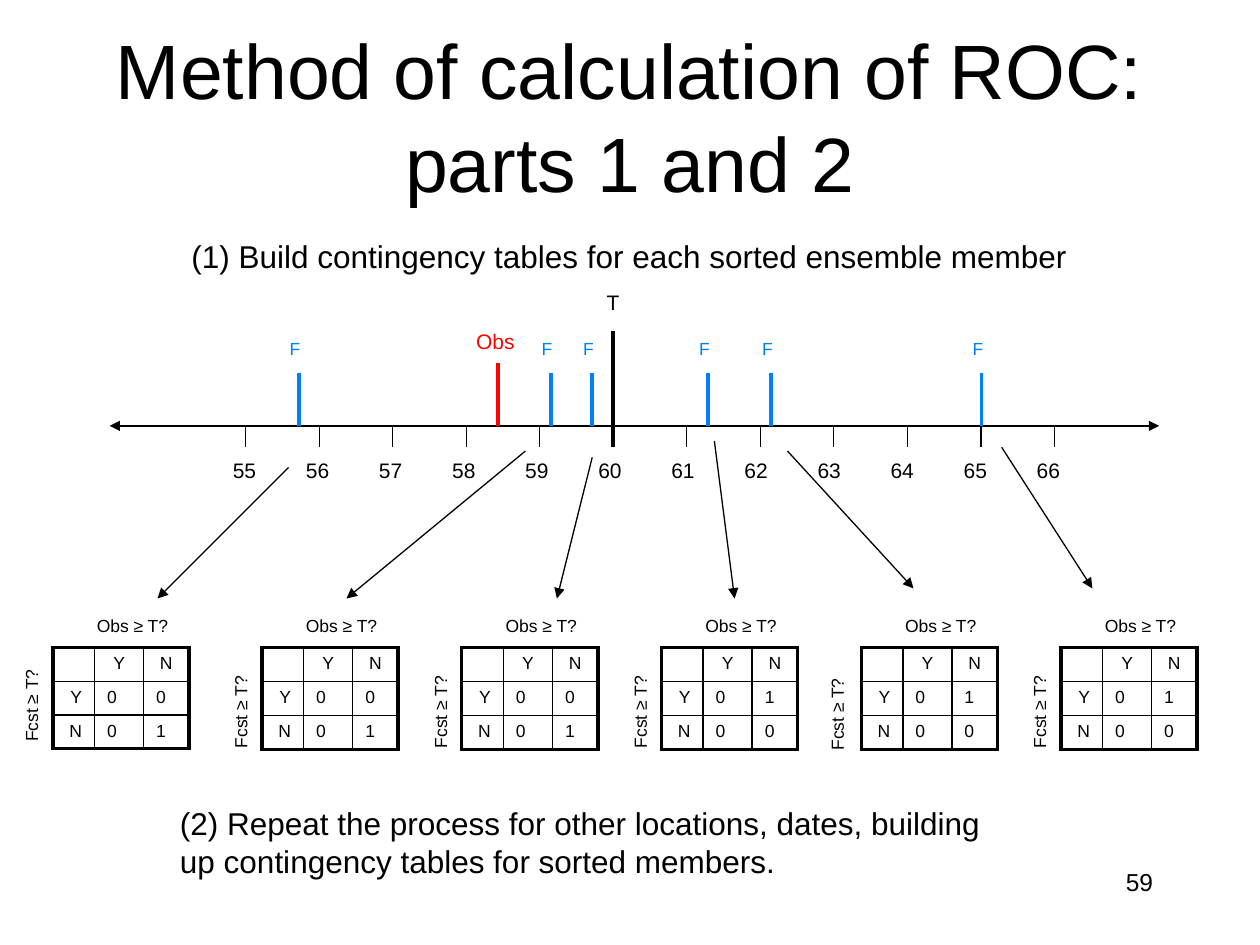
import pptx
import pptx.dml.color
import pptx.enum.shapes
import pptx.enum.text
import pptx.oxml
import pptx.oxml.ns
import pptx.util
from lxml import etree

Inches, Pt = pptx.util.Inches, pptx.util.Pt
ALIGN = pptx.enum.text.PP_ALIGN
BLACK, BLUE, RED = "000000", "0080FF", "FF0000"


def rgb(code):
    return pptx.dml.color.RGBColor.from_string(code)


def sub(parent, tag, **attrs):
    return etree.SubElement(parent, pptx.oxml.ns.qn(tag), **attrs)


class Deck:
    font = "Arial"
    thin, thick = 0.75, 2.25
    grid = 1

    def __init__(self, width, height):
        self.prs = pptx.Presentation()
        self.prs.slide_width, self.prs.slide_height = Inches(width), Inches(height)
        self.s = self.prs.slides.add_slide(self.prs.slide_layouts[6])

    def run(self, p, text, size, color=BLACK):
        r = p.add_run()
        r.text = text
        r.font.name, r.font.size = self.font, Pt(size)
        r.font.color.rgb = rgb(color)

    def text(self, x, y, w, h, lines, size, color=BLACK, align=ALIGN.LEFT,
             wrap=False, rotation=0):
        sp = self.s.shapes.add_textbox(Inches(x), Inches(y), Inches(w), Inches(h))
        sp.rotation = rotation
        tf = sp.text_frame
        tf.word_wrap = wrap
        if not wrap:
            tf.auto_size = pptx.enum.text.MSO_AUTO_SIZE.SHAPE_TO_FIT_TEXT
        for i, line in enumerate(lines):
            p = tf.add_paragraph() if i else tf.paragraphs[0]
            p.alignment = align
            self.run(p, line, size, color)
        return tf

    def title(self, x, y, w, h, first, second, size):
        tf = self.text(x, y, w, h, [first], size, align=ALIGN.CENTER, wrap=True)
        tf.vertical_anchor = pptx.enum.text.MSO_ANCHOR.MIDDLE
        p = tf.paragraphs[0]
        p.add_line_break()
        self.run(p, second, size)

    def tabbed(self, x, y, w, h, words, pitch, size):
        """One line of words set on evenly spaced tab stops."""
        tf = self.text(x, y, w, h, ["\t".join(words)], size, wrap=True)
        tabs = sub(tf.paragraphs[0]._p.get_or_add_pPr(), "a:tabLst")
        for i in range(1, len(words)):
            sub(tabs, "a:tab", pos=str(Inches(pitch * i)), algn="l")

    def line(self, x1, y1, x2, y2, width=thin, color=BLACK, ends=()):
        """Straight line; ends holds a:headEnd and a:tailEnd where arrows go."""
        c = self.s.shapes.add_connector(
            pptx.enum.shapes.MSO_CONNECTOR.STRAIGHT,
            Inches(x1), Inches(y1), Inches(x2), Inches(y2))
        c.line.width = Pt(width)
        c.line.color.rgb = rgb(color)
        for end in ends:
            sub(c.line._get_or_add_ln(), end, type="triangle")
        sub(c._element.spPr, "a:effectLst")

    def border(self, cell, row, col, last):
        tc_pr = cell._tc.get_or_add_tcPr()
        outer = {"L": col == 0, "R": col == last, "T": row == 0, "B": row == last}
        for side, is_outer in outer.items():
            width = self.thick if is_outer else self.grid
            ln = sub(tc_pr, "a:ln" + side, w=str(Pt(width)))
            sub(sub(ln, "a:solidFill"), "a:srgbClr", val=BLACK)

    def table(self, x, y, widths, row_height, rows, size):
        n = len(rows)
        frame = self.s.shapes.add_table(n, len(widths), Inches(x), Inches(y),
                                        Inches(sum(widths)), Inches(row_height * n))
        t = frame.table
        t.first_row = t.horz_banding = False
        for column, width in zip(t.columns, widths):
            column.width = Inches(width)
        for i, row in enumerate(rows):
            t.rows[i].height = Inches(row_height)
            for j, value in enumerate(row):
                cell = t.cell(i, j)
                self.border(cell, i, j, n - 1)
                cell.fill.background()
                p = cell.text_frame.paragraphs[0]
                p.space_before = Pt(size * 0.2)
                p.alignment = (ALIGN.CENTER if i == 0 else
                               ALIGN.RIGHT if j == 0 else ALIGN.LEFT)
                if value:
                    self.run(p, value, size)
                else:
                    sub(p._p, "a:endParaRPr", sz=str(size * 100))


def draw_axis(d):
    axis_y, tick_y, first_x, pitch = 3.38, 3.55, 1.95, 0.5835
    threshold = 60
    values = range(55, 67)
    d.line(0.87, axis_y, 9.2, axis_y, ends=("a:headEnd", "a:tailEnd"))
    for i, value in enumerate(values):
        x = first_x + pitch * i
        if value == threshold:
            d.line(x, 2.63, x, tick_y, d.thick)
            d.text(x - 0.15, 2.25, 0.3, 0.3, ["T"], 12)
        else:
            d.line(x, axis_y, x, tick_y)
    d.tabbed(1.75, 3.58, 6.9, 0.3, [str(v) for v in values], 0.58, 12)
    for x in (2.37, 4.37, 4.7, 5.62, 6.12, 7.79):
        d.line(x, 2.96, x, axis_y, d.thick, BLUE)
        d.text(x - 0.17, 2.63, 0.29, 0.27, ["F"], 10, BLUE)
    d.line(3.95, 2.88, 3.95, axis_y, d.thick, RED)
    d.text(3.68, 2.56, 0.51, 0.3, ["Obs"], 12, RED)


def draw_contingency(d, x, row_height, fcst_dx, fcst_y, yes_row, no_row):
    rows = [["", "Y", "N"], ["Y", *yes_row], ["N", *no_row]]
    d.table(x, 5.14, (0.33, 0.39, 0.36), row_height, rows, 10)
    d.text(x + 0.25, 4.83, 0.77, 0.27, ["Obs ≥ T?"], 10)
    d.text(x + fcst_dx, fcst_y, 0.78, 0.27, ["Fcst ≥ T?"], 10, rotation=270)


def main():
    d = Deck(10, 7.5)
    d.title(0.75, 0.5, 8.5, 0.83, "Method of calculation of ROC:", "parts 1 and 2", 44)
    d.text(1.42, 1.83, 7.15, 0.4,
           ["(1) Build contingency tables for each sorted ensemble member"], 18)
    draw_axis(d)

    below, above = ("00", "01"), ("01", "00")
    draw_contingency(d, 0.42, 0.26, -0.56, 5.46, *below)
    for i, counts in enumerate((below, below, above, above, above)):
        fcst_dx, fcst_y = (-0.58, 5.53) if i == 3 else (-0.56, 5.51)
        draw_contingency(d, 2.08 + 1.585 * i, 0.27, fcst_dx, fcst_y, *counts)

    for arrow in ((2.29, 3.71, 1.25, 4.75), (4.17, 3.58, 2.75, 4.75),
                  (4.7, 3.63, 4.42, 4.75), (5.67, 3.5, 5.83, 4.75),
                  (6.25, 3.58, 7.25, 4.67), (7.95, 3.55, 8.67, 4.67)):
        d.line(*arrow, ends=("a:tailEnd",))

    d.text(1.33, 6.33, 6.55, 0.7,
           ["(2) Repeat the process for other locations, dates, building",
            "up contingency tables for sorted members."], 18)
    d.text(7.17, 6.83, 2.08, 0.5, ["59"], 14, align=ALIGN.RIGHT, wrap=True)
    d.prs.save("out.pptx")


if __name__ == "__main__":
    main()
